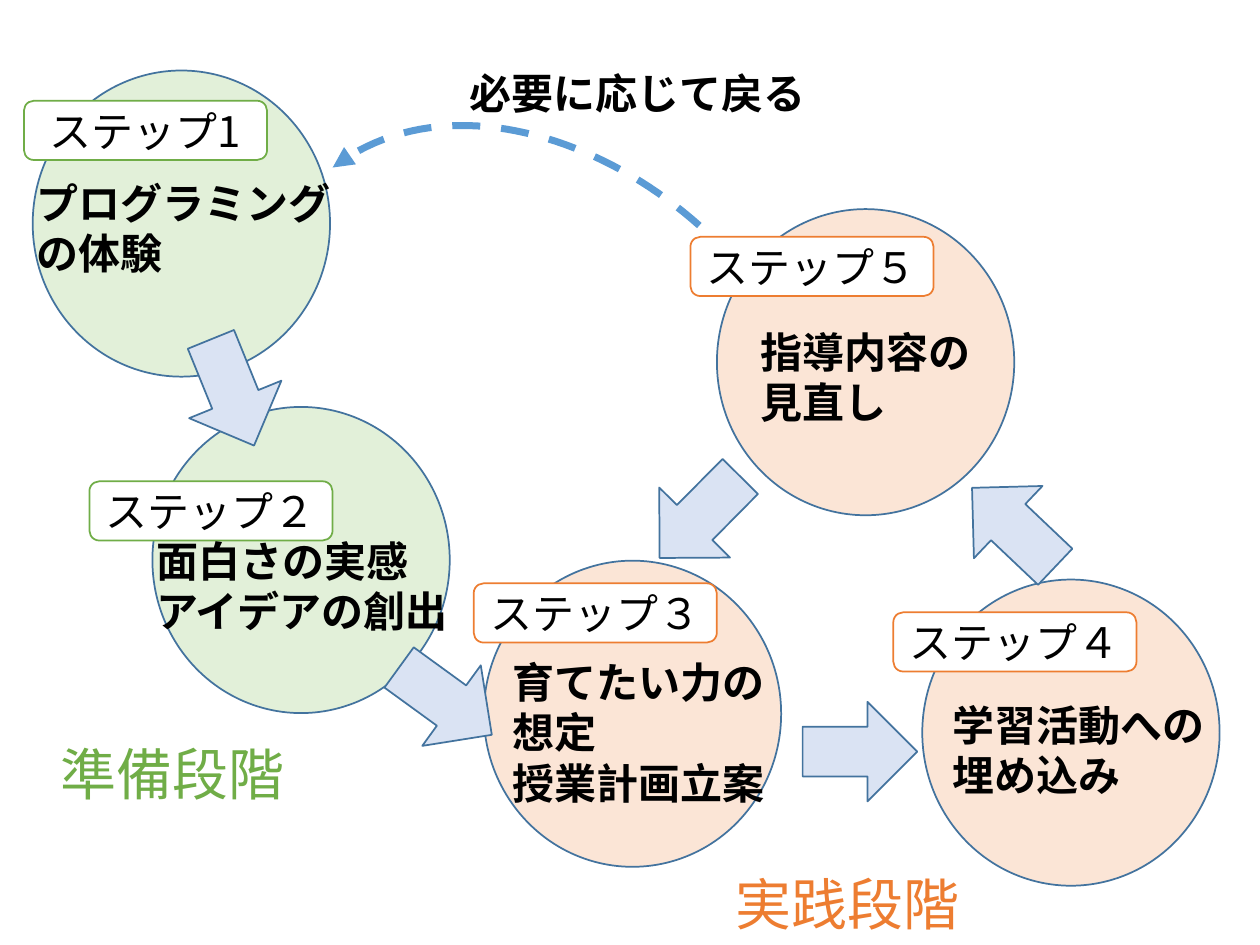
"""Build a slide of five teaching steps in a preparation and a practice stage."""
import dataclasses
import typing

import lxml.etree
import pptx
import pptx.dml.color
import pptx.enum.dml
import pptx.enum.shapes
import pptx.enum.text
import pptx.oxml.ns
import pptx.util

Inches = pptx.util.Inches
Shapes = pptx.enum.shapes.MSO_SHAPE
FONT = "Noto Sans CJK JP"
COLORS = {
    "black": "000000",
    "white": "FFFFFF",
    "outline": "43739E",
    "arrow": "DAE3F3",
    "return": "5B9BD5",
    "green": "70AD47",
    "orange": "ED7D31",
    "pale green": "E2F0D9",
    "pale orange": "FBE5D6",
}
CIRCLE_SIZE = (2.36, 2.43)
ARROW_SIZE = (0.91, 0.79)
LABEL_SIZE = (1.93, 0.47)
Point = tuple[float, float]


@dataclasses.dataclass
class Step:
    label: str
    text: str
    stage: str
    circle_at: Point
    label_at: Point
    text_at: Point
    text_size: Point


@dataclasses.dataclass
class Arrow:
    at: Point
    rotation: float


@dataclasses.dataclass
class Caption:
    text: str
    at: Point
    size: Point
    points: int
    color: str
    bold: bool


STEPS = [
    Step("ステップ1", "プログラミングの体験", "green",
         (0.26, 0.56), (0.19, 0.8), (0.19, 1.36), (2.72, 1.31)),
    Step("ステップ２", "面白さの実感\nアイデアの創出", "green",
         (1.21, 3.23), (0.71, 3.82), (1.14, 4.2), (2.72, 1.31)),
    Step("ステップ３", "育てたい力の想定\n授業計画立案", "orange",
         (3.84, 4.45), (3.76, 4.63), (3.97, 5.16), (2.29, 1.31)),
    Step("ステップ４", "学習活動への\n埋め込み", "orange",
         (7.32, 4.6), (7.09, 4.86), (7.46, 5.5), (2.29, 0.91)),
    Step("ステップ５", "指導内容の\n見直し", "orange",
         (5.69, 1.66), (5.48, 1.88), (5.94, 2.54), (2.29, 0.91)),
]
ARROWS = [
    Arrow((1.39, 2.72), 67.9),
    Arrow((3.08, 5.17), 36),
    Arrow((6.37, 5.57), 0),
    Arrow((7.59, 3.79), 223.5),
    Arrow((5.1, 3.71), 134.7),
]
CAPTIONS = [
    Caption("必要に応じて戻る", (3.63, 0.49), (3.19, 0.5), 24, "black", True),
    Caption("準備段階", (0.38, 5.82), (2.26, 0.64), 32, "green", False),
    Caption("実践段階", (5.74, 6.85), (2.26, 0.64), 32, "orange", False),
]
RETURN_CURVE = [(5.55, 1.79), (4.71, 1.04), (3.48, 0.69), (2.64, 1.33)]


def rgb(name: str) -> pptx.dml.color.RGBColor:
    return pptx.dml.color.RGBColor.from_string(COLORS[name])


def write(shape: typing.Any, text: str, points: int, color: str, bold: bool,
          centred: bool = False) -> None:
    frame = shape.text_frame
    frame.word_wrap = True
    frame.text = text
    for para in frame.paragraphs:
        if centred:
            para.alignment = pptx.enum.text.PP_ALIGN.CENTER
        for span in para.runs:
            span.font.name = FONT
            span.font.size = pptx.util.Pt(points)
            span.font.bold = bold
            span.font.color.rgb = rgb(color)
            east_asian = lxml.etree.SubElement(
                span.font._element, pptx.oxml.ns.qn("a:ea"))
            east_asian.set("typeface", FONT)


def add_box(page: typing.Any, kind: Shapes, at: Point, size: Point,
            fill: str, line: str) -> typing.Any:
    box = page.shapes.add_shape(kind, *map(Inches, at + size))
    box.shadow.inherit = False
    box.fill.solid()
    box.fill.fore_color.rgb = rgb(fill)
    box.line.color.rgb = rgb(line)
    box.line.width = pptx.util.Pt(1)
    return box


def add_label(page: typing.Any, step: Step) -> None:
    box = add_box(page, Shapes.ROUNDED_RECTANGLE, step.label_at, LABEL_SIZE,
                  "white", step.stage)
    box.text_frame.vertical_anchor = pptx.enum.text.MSO_ANCHOR.MIDDLE
    write(box, step.label, 24, "black", False, centred=True)


def add_caption(page: typing.Any, caption: Caption) -> None:
    box = page.shapes.add_textbox(*map(Inches, caption.at + caption.size))
    write(box, caption.text, caption.points, caption.color, caption.bold)
    box.text_frame.auto_size = pptx.enum.text.MSO_AUTO_SIZE.SHAPE_TO_FIT_TEXT


def curve_point(controls: list[Point], t: float) -> Point:
    weights = ((1 - t) ** 3, 3 * t * (1 - t) ** 2, 3 * t ** 2 * (1 - t), t ** 3)
    x, y = (sum(w * c for w, c in zip(weights, axis)) for axis in zip(*controls))
    return Inches(x), Inches(y)


def add_return_arrow(page: typing.Any, controls: list[Point], pieces: int = 40) -> None:
    points = [curve_point(controls, i / pieces) for i in range(pieces + 1)]
    builder = page.shapes.build_freeform(*points[0])
    builder.add_line_segments(points[1:], close=False)
    curve = builder.convert_to_shape()
    curve.shadow.inherit = False
    curve.fill.background()
    curve.line.color.rgb = rgb("return")
    curve.line.width = pptx.util.Pt(4)
    curve.line.dash_style = pptx.enum.dml.MSO_LINE.DASH
    tail = lxml.etree.SubElement(
        curve.line._get_or_add_ln(), pptx.oxml.ns.qn("a:tailEnd"))
    tail.set("type", "triangle")


def main() -> None:
    deck = pptx.Presentation()
    deck.slide_width, deck.slide_height = Inches(10), Inches(7.5)
    page = deck.slides.add_slide(deck.slide_layouts[6])
    for step in STEPS:
        add_box(page, Shapes.OVAL, step.circle_at, CIRCLE_SIZE,
                f"pale {step.stage}", "outline")
    for arrow in ARROWS:
        box = add_box(page, Shapes.RIGHT_ARROW, arrow.at, ARROW_SIZE,
                      "arrow", "outline")
        box.rotation = arrow.rotation
    for step in STEPS:
        add_label(page, step)
        add_caption(page, Caption(step.text, step.text_at, step.text_size,
                                  24, "black", True))
    add_return_arrow(page, RETURN_CURVE)
    for caption in CAPTIONS:
        add_caption(page, caption)
    deck.save("out.pptx")


if __name__ == "__main__":
    main()
